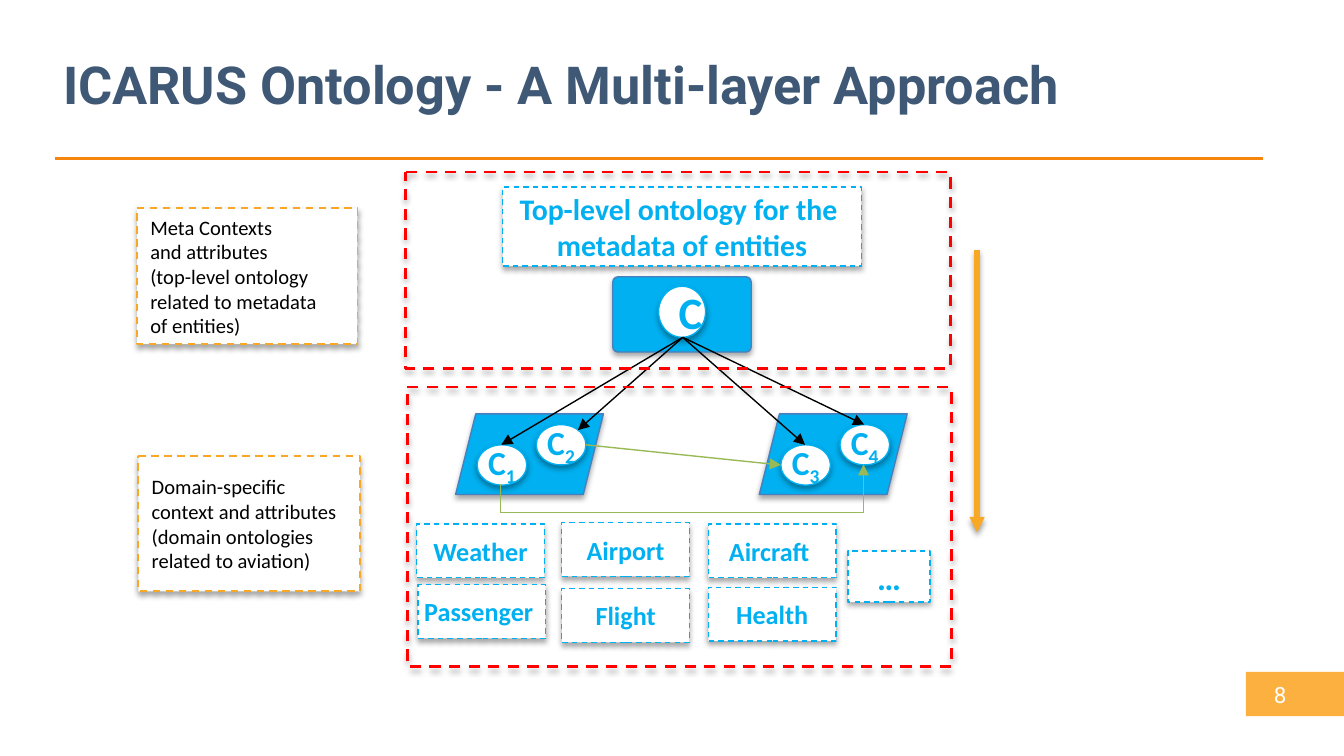
from dataclasses import dataclass
from typing import Any, NamedTuple, Optional

import pptx
import pptx.dml.color
import pptx.enum.dml
import pptx.enum.shapes
import pptx.enum.text
import pptx.oxml
import pptx.oxml.ns
import pptx.util

EMU_PER_PX = 9144  # 100 px to the inch
Kind = pptx.enum.shapes.MSO_SHAPE
Align = pptx.enum.text.PP_ALIGN
Anchor = pptx.enum.text.MSO_ANCHOR
Link = pptx.enum.shapes.MSO_CONNECTOR


@dataclass(frozen=True)
class Theme:
    heading_font: str = "Roboto"
    body_font: str = "Calibri"
    heading: str = "3E5875"
    rule: str = "F5850D"
    badge: str = "FCB040"
    amber: str = "F9A825"
    blue: str = "00B0F0"
    blue_edge: str = "4B7EBC"
    green: str = "98B955"
    red: str = "FF0000"
    black: str = "000000"
    white: str = "FFFFFF"
    title_size: int = 28
    root_size: int = 24
    concept_size: int = 18
    layer_size: int = 16
    domain_size: int = 14
    page_size: int = 12
    note_size: int = 11


THEME = Theme()


class Point(NamedTuple):
    x: int
    y: int


class Box(NamedTuple):
    x: int
    y: int
    width: int
    height: int

    def at(self, across: float, down: float) -> Point:
        """Point at the given fractions of the width and height."""
        return Point(int(self.x + self.width * across), int(self.y + self.height * down))


class Style(NamedTuple):
    kind: Any
    fill: Optional[str]
    line: Optional[str]
    width: float = 0.75
    dashed: bool = False
    shadow: bool = True
    corner: Optional[float] = None


class Lettering(NamedTuple):
    size: int
    color: str
    bold: bool = False
    font: str = THEME.body_font
    align: Any = Align.CENTER


class Domain(NamedTuple):
    label: str
    x: int
    y: int


class Cluster(NamedTuple):
    plate: Box
    concepts: dict[str, Box]


NOTE = Style(Kind.ROUNDED_RECTANGLE, THEME.white, THEME.amber, 1, True, corner=0)
ROOT_PLATE = Style(Kind.ROUNDED_RECTANGLE, THEME.blue, THEME.blue_edge, corner=0.07)
PLATE = Style(Kind.PARALLELOGRAM, THEME.blue, THEME.blue_edge)
CONCEPT = Style(Kind.OVAL, THEME.white, THEME.blue)
FRAME = Style(Kind.FLOWCHART_PROCESS, None, THEME.red, 1.5, True)
LABEL = Style(Kind.RECTANGLE, THEME.white, THEME.blue, 0.75, True)
BADGE = Style(Kind.RECTANGLE, THEME.badge, None, shadow=False)

NOTE_TEXT = Lettering(THEME.note_size, THEME.black, align=Align.LEFT)
TITLE_TEXT = Lettering(THEME.title_size, THEME.heading, True, THEME.heading_font, Align.LEFT)
PAGE_TEXT = Lettering(THEME.page_size, THEME.white, font=THEME.heading_font)
DOMAIN_TEXT = Lettering(THEME.domain_size, THEME.blue, True)
LAYER_TEXT = Lettering(THEME.layer_size, THEME.blue, True)
CONCEPT_TEXT = Lettering(THEME.concept_size, THEME.blue, True)
ROOT_TEXT = Lettering(THEME.root_size, THEME.blue, True)

NOTES = {
    Box(102, 155, 164, 101): ["Meta Contexts", "and attributes",
                              "(top-level ontology related to metadata", "of entities)"],
    Box(103, 339, 165, 101): ["Domain-specific context and attributes",
                              "(domain ontologies related to aviation)"],
}
ROOT = Box(490, 213, 35, 38)
CLUSTERS = [
    Cluster(Box(x, 308, 110, 60), {low: Box(x + 16, 331, 37, 30), high: Box(x + 60, 316, 37, 30)})
    for x, low, high in ((339, "1", "2"), (565, "3", "4"))
]
FRAMES = [Box(303, 288, 405, 208), Box(302, 128, 405, 146)]
DOMAINS = [
    Domain("Weather", 310, 390), Domain("Airport", 418, 389), Domain("Aircraft ", 527, 390),
    Domain("Flight", 418, 438), Domain("Passenger ", 311, 435), Domain("Health", 527, 437),
]


def px(length: float) -> int:
    return round(length * EMU_PER_PX)


def rgb(color: str) -> pptx.dml.color.RGBColor:
    return pptx.dml.color.RGBColor.from_string(color)


def add_shadow(properties: Any, alpha: int = 35) -> None:
    """Replace the effects in a shape's properties by a soft shadow below it."""
    for old in properties.findall(pptx.oxml.ns.qn("a:effectLst")):
        properties.remove(old)
    properties.append(pptx.oxml.parse_xml(
        f'<a:effectLst {pptx.oxml.ns.nsdecls("a")}><a:outerShdw blurRad="39370" dist="22860" '
        f'dir="5400000" rotWithShape="0"><a:srgbClr val="{THEME.black}">'
        f'<a:alpha val="{alpha}000"/></a:srgbClr></a:outerShdw></a:effectLst>'))


def write(paragraph: Any, text: str, look: Lettering, subscript: bool = False) -> None:
    paragraph.alignment = look.align
    run = paragraph.add_run()
    run.text = text
    run.font.name, run.font.size, run.font.bold = look.font, pptx.util.Pt(look.size), look.bold
    run.font.color.rgb = rgb(look.color)
    if subscript:
        run.font._element.set("baseline", "-25000")


def draw(shapes: Any, box: Box, style: Style, lines: Optional[list[str]] = None,
         look: Lettering = NOTE_TEXT, wrap: bool = True) -> Any:
    shape = shapes.add_shape(style.kind, *map(px, box))
    shape.shadow.inherit = False
    if style.corner is not None:
        shape.adjustments[0] = style.corner
    if style.fill:
        shape.fill.solid()
        shape.fill.fore_color.rgb = rgb(style.fill)
    else:
        shape.fill.background()
    if style.line:
        shape.line.color.rgb = rgb(style.line)
        shape.line.width = pptx.util.Pt(style.width)
    else:
        shape.line.fill.background()
    if style.dashed:
        shape.line.dash_style = pptx.enum.dml.MSO_LINE.DASH
    if style.shadow:
        add_shadow(shape._element.spPr)
    frame = shape.text_frame
    frame.word_wrap = wrap
    frame.vertical_anchor = Anchor.MIDDLE
    for number, line in enumerate(lines or []):
        write(frame.add_paragraph() if number else frame.paragraphs[0], line, look)
    return shape


def connect(shapes: Any, start: Point, end: Point, color: str, width: float = 0.75,
            arrow: bool = True, kind: Any = Link.STRAIGHT) -> Any:
    connector = shapes.add_connector(kind, *map(px, (*start, *end)))
    connector.line.color.rgb = rgb(color)
    connector.line.width = pptx.util.Pt(width)
    properties = connector._element.spPr
    if arrow:
        properties.find(pptx.oxml.ns.qn("a:ln")).append(pptx.oxml.parse_xml(
            f'<a:tailEnd {pptx.oxml.ns.nsdecls("a")} type="triangle"/>'))
    properties.append(pptx.oxml.parse_xml(f'<a:effectLst {pptx.oxml.ns.nsdecls("a")}/>'))
    return connector


def connect_below(shapes: Any, start: Point, end: Point, color: str, drop: int) -> None:
    """Elbow arrow that leaves start downwards by drop and rises into end."""
    rise, run = start.y - end.y, end.x - start.x
    middle = Point((start.x + end.x) // 2, (start.y + end.y) // 2)
    begin = Point(middle.x + rise // 2, middle.y + run // 2)
    connector = connect(shapes, begin, Point(begin.x - rise, begin.y - run), color,
                        kind=Link.ELBOW)
    properties = connector._element.spPr
    properties.find(pptx.oxml.ns.qn("a:xfrm")).set("rot", "5400000")
    guides = properties.find(pptx.oxml.ns.qn("a:prstGeom")).get_or_add_avLst()
    guides.append(pptx.oxml.parse_xml(f'<a:gd {pptx.oxml.ns.nsdecls("a")} name="adj1" '
                                      f'fmla="val {round(-100000 * drop / rise)}"/>'))


def add_heading(slide: Any) -> None:
    title = slide.shapes.title
    title.left, title.top, title.width, title.height = map(px, (41, 32, 899, 68))
    frame = title.text_frame
    frame.margin_left = frame.margin_right = frame.margin_top = frame.margin_bottom = px(6)
    frame.vertical_anchor = Anchor.MIDDLE
    frame.auto_size = pptx.enum.text.MSO_AUTO_SIZE.NONE
    frame.paragraphs[0].line_spacing = 0.85
    write(frame.paragraphs[0], "ICARUS Ontology - A Multi-layer Approach", TITLE_TEXT)
    connect(slide.shapes, Point(41, 118), Point(940, 118), THEME.rule, 1.5, arrow=False)


def add_page_number(shapes: Any) -> None:
    draw(shapes, Box(927, 500, 74, 33), BADGE)
    frame = shapes.add_textbox(*map(px, (940, 505, 25, 21))).text_frame
    frame.margin_left = frame.margin_right = frame.margin_top = frame.margin_bottom = px(2)
    frame.word_wrap = True
    write(frame.paragraphs[0], "8", PAGE_TEXT)


def add_concepts(shapes: Any) -> None:
    root = shapes.add_group_shape().shapes
    draw(root, Box(456, 206, 103, 56), ROOT_PLATE)
    draw(root, ROOT, CONCEPT, ["C"], ROOT_TEXT)
    for cluster in CLUSTERS:
        members = shapes.add_group_shape().shapes
        draw(members, cluster.plate, PLATE)
        for index, box in cluster.concepts.items():
            concept = draw(members, box, CONCEPT, ["C"], CONCEPT_TEXT, wrap=False)
            write(concept.text_frame.paragraphs[0], index, CONCEPT_TEXT, subscript=True)


def add_relations(shapes: Any) -> None:
    boxes = {index: box for cluster in CLUSTERS for index, box in cluster.concepts.items()}
    for index in ("2", "1", "3", "4"):
        target = boxes[index].at(0.85, 0.15) if index == "2" else boxes[index].at(0.5, 0)
        connect(shapes, ROOT.at(0.53, 1), target, THEME.black)
    layers = connect(shapes, Point(727, 186), Point(727, 396), THEME.amber, 2.75)
    add_shadow(layers._element.spPr, 38)
    connect(shapes, boxes["2"].at(1, 0.5), boxes["3"].at(0, 0.5), THEME.green)
    connect_below(shapes, boxes["1"].at(0.5, 1), boxes["4"].at(0.5, 1), THEME.green, 21)


def main() -> None:
    deck = pptx.Presentation()
    deck.slide_width = px(1000)
    deck.slide_height = deck.slide_width * 9 // 16
    slide = deck.slides.add_slide(deck.slide_layouts[5])
    shapes = slide.shapes
    add_heading(slide)
    add_page_number(shapes)
    for box, lines in NOTES.items():
        draw(shapes, box, NOTE, lines)
    add_concepts(shapes)
    add_relations(shapes)
    for box in FRAMES:
        draw(shapes, box, FRAME)
    for domain in DOMAINS:
        draw(shapes, Box(domain.x, domain.y, 95, 40), LABEL, [domain.label], DOMAIN_TEXT, False)
    draw(shapes, Box(374, 139, 267, 59), LABEL,
         ["Top-level ontology for the ", "metadata of entities"], LAYER_TEXT, False)
    draw(shapes, Box(631, 410, 61, 38), LABEL, [" … "], CONCEPT_TEXT, False)
    deck.save("out.pptx")


if __name__ == "__main__":
    main()
